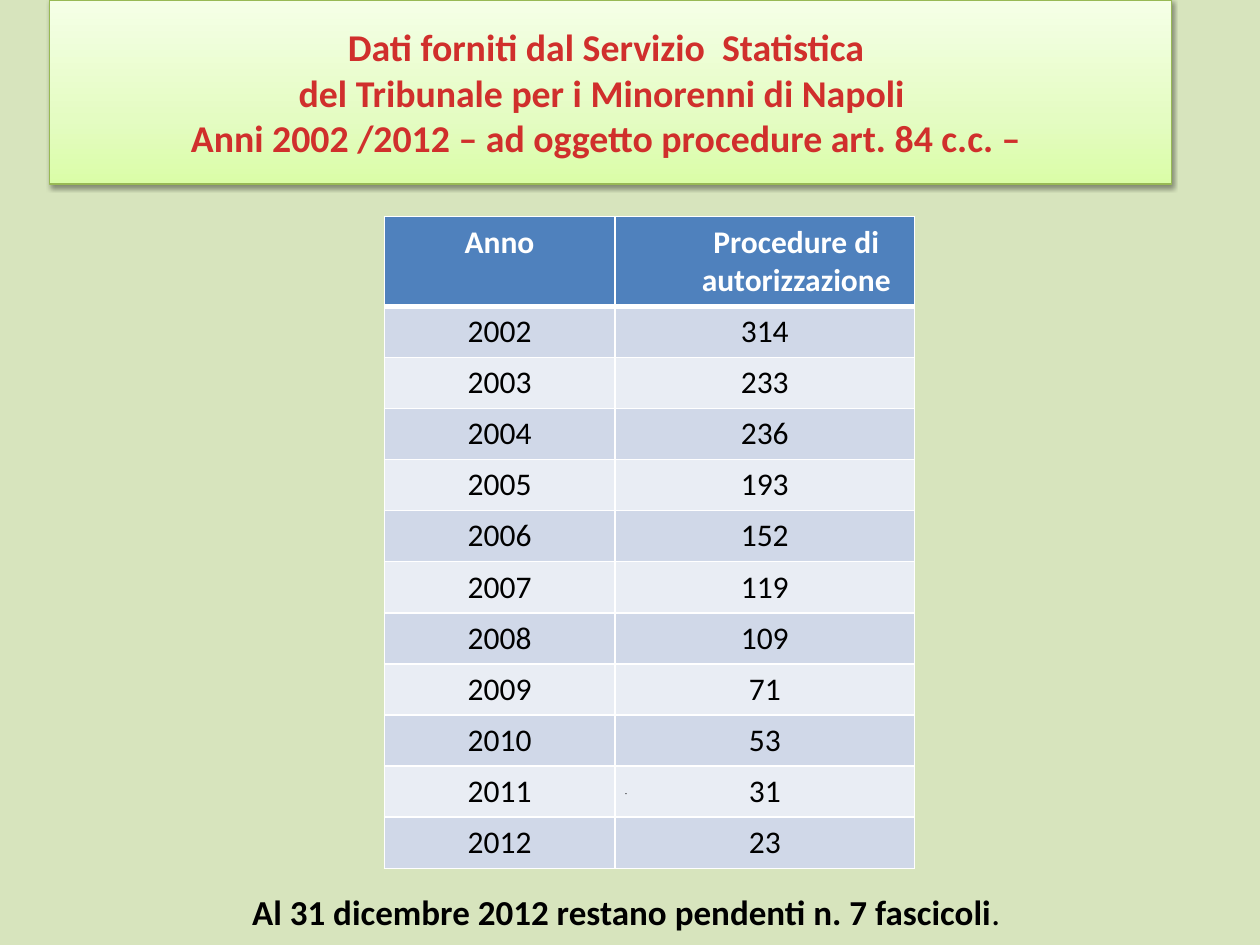
from lxml import etree
from pptx import Presentation
from pptx.dml.color import RGBColor
from pptx.enum.text import MSO_ANCHOR, MSO_AUTO_SIZE, PP_ALIGN
from pptx.oxml import parse_xml
from pptx.oxml.ns import nsdecls, qn
from pptx.util import Inches, Pt

CENTER = PP_ALIGN.CENTER
MIDDLE = MSO_ANCHOR.MIDDLE
NO_FIT = MSO_AUTO_SIZE.NONE
TITLE_ONLY = 5
FONT = "Calibri"
COLORS = {
    "background": "D7E4BD", "title": "D02F2C", "title_line": "98B955",
    "grad_start": "DAFDA7", "grad_mid": "E4FCC2", "grad_end": "F5FFE7",
    "header": "4F81BD", "odd": "D0D8E8", "even": "E9EDF4",
    "white": "FFFFFF", "black": "000000",
}
TITLE = ("Dati forniti dal Servizio  Statistica \v"
         "del Tribunale per i Minorenni di Napoli  \v"
         "Anni 2002 /2012 – ad oggetto procedure art. 84 c.c. – ")
HEADERS = ("Anno", "Procedure di autorizzazione")
PROCEDURES = (314, 233, 236, 193, 152, 119, 109, 71, 53, 31, 23)
FIRST_YEAR = 2002
HEADER_HEIGHT, ROW_HEIGHT = 0.7, 0.4


def color(name):
    return RGBColor.from_string(COLORS[name])


def write(p, text, size=18, bold=False, fill="black"):
    """Add centred text to a paragraph; a vertical tab breaks the line."""
    p.alignment = CENTER
    for i, line in enumerate(text.split("\v")):
        if i:
            p.add_line_break()
        r = p.add_run()
        r.text = line
        r.font.name, r.font.size, r.font.bold = FONT, Pt(size), bold
        r.font.color.rgb = color(fill)


def place(s, box):
    s.left, s.top, s.width, s.height = map(Inches, box)


def add_gradient(s, stops, angle):
    gs = "".join(f'<a:gs pos="{pos * 1000}"><a:srgbClr val="{COLORS[name]}"/></a:gs>'
                 for pos, name in stops)
    s.fill.gradient()
    old = s._element.spPr.find(qn("a:gradFill"))
    old.getparent().replace(old, parse_xml(
        f'<a:gradFill {nsdecls("a")} rotWithShape="1"><a:gsLst>{gs}</a:gsLst>'
        f'<a:lin ang="{angle * 60000}" scaled="0"/></a:gradFill>'))


def add_shadow(s):
    s._element.spPr.append(parse_xml(
        f'<a:effectLst {nsdecls("a")}><a:outerShdw blurRad="{Pt(3.1)}" dist="{Pt(1.6)}" '
        f'dir="5400000" rotWithShape="0"><a:srgbClr val="{COLORS["black"]}">'
        '<a:alpha val="38000"/></a:srgbClr></a:outerShdw></a:effectLst>'))


def set_border(cell, side, width):
    tc_pr = cell._tc.get_or_add_tcPr()
    ln = etree.SubElement(tc_pr, qn(f"a:ln{side}"), w=str(Pt(width)))
    fill = etree.SubElement(ln, qn("a:solidFill"))
    etree.SubElement(fill, qn("a:srgbClr"), val=COLORS["white"])


def add_title(slide, box):
    s = slide.shapes.title
    place(s, box)
    add_gradient(s, ((0, "grad_start"), (35, "grad_mid"), (100, "grad_end")), 270)
    s.line.color.rgb = color("title_line")
    s.line.width = Pt(0.75)
    add_shadow(s)
    tf = s.text_frame
    tf.auto_size, tf.vertical_anchor, tf.word_wrap = NO_FIT, MIDDLE, True
    write(tf.paragraphs[0], TITLE, size=21.6, bold=True, fill="title")


def add_procedures_table(slide, box, widths):
    rows = [HEADERS] + [(str(FIRST_YEAR + i), str(n)) for i, n in enumerate(PROCEDURES)]
    table = slide.shapes.add_table(len(rows), len(widths), *map(Inches, box)).table
    for column, width in zip(table.columns, widths):
        column.width = Inches(width)
    for i, values in enumerate(rows):
        header = i == 0
        table.rows[i].height = Inches(HEADER_HEIGHT if header else ROW_HEIGHT)
        for j, value in enumerate(values):
            cell = table.cell(i, j)
            for side in "LRTB":
                thick = (header and side == "B") or (i == 1 and side == "T")
                set_border(cell, side, 3 if thick else 1)
            cell.fill.solid()
            cell.fill.fore_color.rgb = color("header" if header else "odd" if i % 2 else "even")
            write(cell.text_frame.paragraphs[0], value, bold=header,
                  fill="white" if header else "black")
    indented = table.cell(0, 1).text_frame.paragraphs[0]._p.get_or_add_pPr()
    indented.set("marL", str(Inches(0.5)))
    indented.set("indent", "0")


def add_closing_note(slide, box):
    tf = slide.shapes.add_textbox(*map(Inches, box)).text_frame
    tf.word_wrap, tf.auto_size, tf.vertical_anchor = True, NO_FIT, MIDDLE
    tf.margin_bottom = Inches(0.13)
    write(tf.paragraphs[0], "-", size=4.5)
    p = tf.add_paragraph()
    p.space_before = Pt(53)
    write(p, "Al 31 dicembre 2012 restano pendenti n. 7 fascicoli", size=20, bold=True)
    write(p, ".", size=20)


def main():
    prs = Presentation()
    prs.slide_width, prs.slide_height = Inches(10), Inches(7.5)
    slide = prs.slides.add_slide(prs.slide_layouts[TITLE_ONLY])
    slide.background.fill.solid()
    slide.background.fill.fore_color.rgb = color("background")
    add_title(slide, (0.39, 0, 8.91, 1.46))
    add_procedures_table(slide, (3.05, 1.72, 4.22, 5.1), (1.83, 2.38))
    add_closing_note(slide, (0.47, 6.48, 9, 0.78))
    prs.save("out.pptx")


if __name__ == "__main__":
    main()
